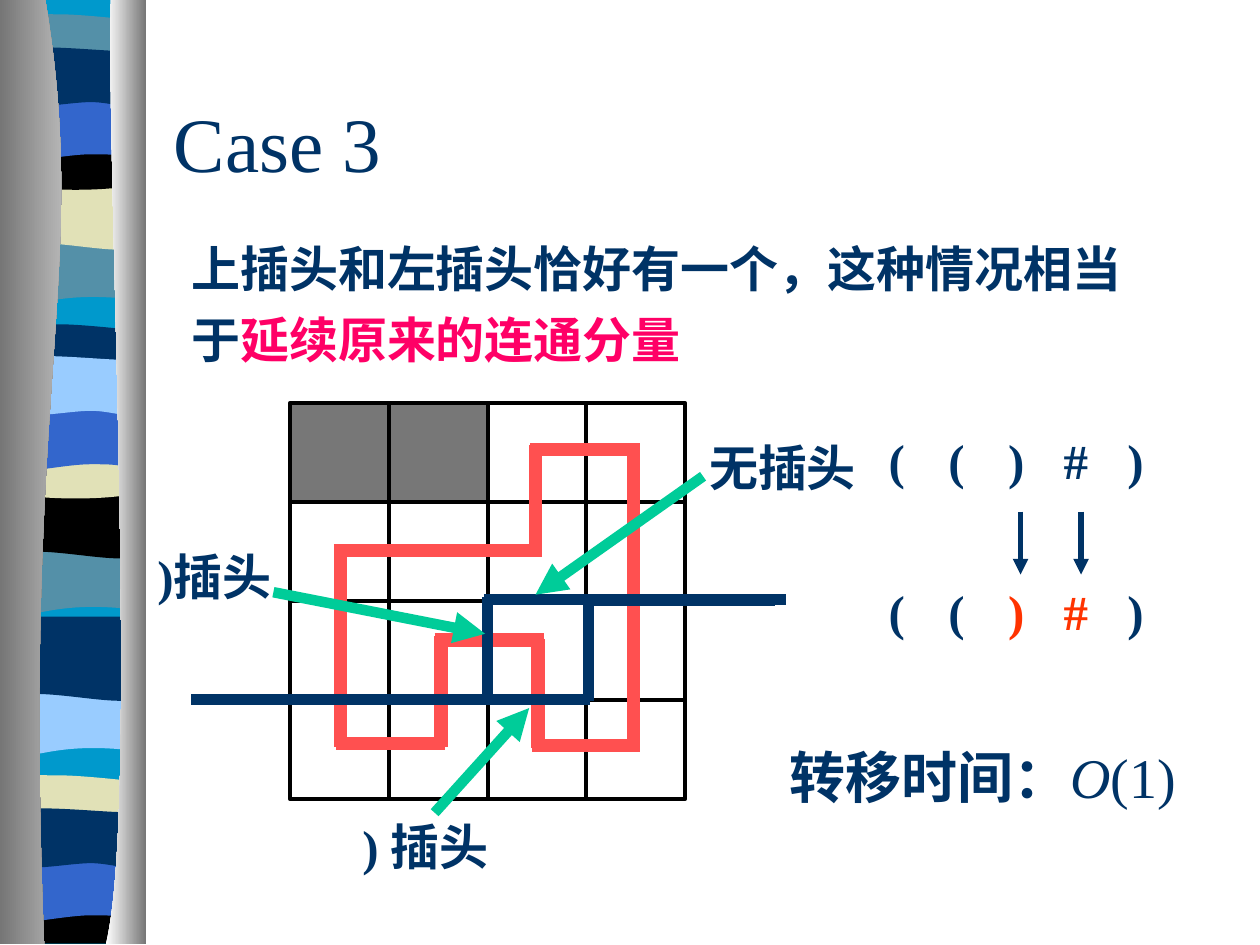
import pptx
import pptx.dml.color
import pptx.enum.shapes
import pptx.enum.text
import pptx.oxml
import pptx.oxml.ns
import pptx.util
from pptx.util import Inches

COLORS = {
    "navy": "003366", "pink": "FF0066", "red": "FF3300", "loop": "FF5050",
    "green": "00CC99", "black": "000000", "gray": "777777", "steel": "767676",
    "silver": "D3D3D3", "white": "FFFFFF", "cyan": "0099CC", "teal": "5490A8",
    "sand": "E1E1B7", "blue": "3366CC", "sky": "99CCFF",
}
LATIN, CHINESE = "Times New Roman", "Noto Sans CJK SC"
ALIGN = pptx.enum.text.PP_ALIGN
ANCHOR = pptx.enum.text.MSO_ANCHOR
LEFT, RIGHT = 0.05, 1.14
SWELL = 1.35

# Band outlines: start, then lines (1 point) and cubic curves (3 points), y from the band's top.
CREST = [[(0.72, 0.05), (0.91, 0), (RIGHT, 0)]]
PROFILES = {
    "slant": [[(RIGHT, 0)], [(RIGHT, 0.47)], [(0.39, 0.39), (0.24, 0.55), (LEFT, 0.47)],
              [(LEFT, 0)]],
    "wave": [[(RIGHT, 0)], [(RIGHT, 0.47)], [(0.96, 0.55), (0.39, 0.41), (LEFT, 0.47)],
             [(LEFT, 0)]],
    "lens": [[(RIGHT, 0)], [(RIGHT, 0.24)], [(0.96, 0.29), (0.24, 0.29), (LEFT, 0.24)],
             [(LEFT, 0)], [(0.12, -0.05), (0.29, -0.04), (0.47, -0.04)],
             [(0.65, -0.04), (1, -0.01), (RIGHT, 0)]],
    "bowl": [[(RIGHT, 0)], [(RIGHT, 0.32)], [(0.96, 0.38), (0.24, 0.38), (LEFT, 0.32)],
             [(LEFT, 0)]] + CREST,
    "foot": [[(RIGHT, 0)], [(RIGHT, 0.37)], [(LEFT, 0.37)], [(LEFT, 0)]] + CREST,
    "arch": [[(RIGHT, 0)], [(RIGHT, 0.47)], [(0.97, 0.42), (0.9, 0.42), (0.72, 0.42)],
             [(0.54, 0.42), (0.22, 0.47), (LEFT, 0.47)], [(LEFT, 0)]],
    "drape": [[(RIGHT, 0)], [(RIGHT, 0.3)], [(1.07, 0.36), (0.9, 0.3), (0.72, 0.3)],
              [(0.54, 0.3), (0.17, 0.36), (LEFT, 0.3)], [(LEFT, 0)],
              [(0.21, -0.05), (0.79, 0), (0.97, 0)]],
}
BANDS = [
    ("slant", 1.85, "teal"), ("wave", 1.41, "sand"), ("lens", 0.21, "teal"),
    ("bowl", 1.08, "black"), ("arch", 0.74, "blue"), ("drape", 0.46, "navy"),
    ("slant", 4.31, "teal"), ("wave", 3.86, "black"), ("lens", 2.67, "navy"),
    ("bowl", 3.53, "sand"), ("arch", 3.2, "blue"), ("drape", 2.91, "sky"),
    ("slant", 5.43, "sky"), ("wave", 4.99, "navy"), ("lens", 6.25, "sand"),
    ("foot", 7.12, "black"), ("arch", 6.78, "blue"), ("drape", 6.5, "navy"),
]


def rgb(name):
    return pptx.dml.color.RGBColor.from_string(COLORS[name])


def drawing_element(markup):
    """Make a DrawingML element from its tag and attributes."""
    return pptx.oxml.parse_xml(f'<a:{markup} {pptx.oxml.ns.nsdecls("a")}/>')


def add_outline(page, outline, top, colors, swell=1):
    """Draw a filled outline; two colours make a left-to-right gradient."""
    heights = [y for segment in outline for _, y in segment]
    middle = (min(heights) + max(heights)) / 2
    points = [(Inches(x), Inches(top + middle + (y - middle) * swell))
              for segment in outline for x, y in segment]
    builder = page.shapes.build_freeform(*points[0], scale=1.0)
    builder.add_line_segments(points[1:], close=True)
    shape = builder.convert_to_shape()
    lines = iter(list(shape._element.iter(pptx.oxml.ns.qn("a:lnTo"))))
    for segment in outline[1:]:
        steps = [next(lines) for _ in segment]
        if len(steps) == 3:
            curve = drawing_element("cubicBezTo")
            steps[0].addprevious(curve)
            for step in steps:
                curve.append(step[0])
                step.getparent().remove(step)
    shape.shadow.inherit = False
    shape.line.fill.background()
    if len(colors) == 1:
        shape.fill.solid()
        shape.fill.fore_color.rgb = rgb(colors[0])
    else:
        shape.fill.gradient()
        shape.fill.gradient_angle = 0
        for stop, color in zip(shape.fill.gradient_stops, colors):
            stop.color.rgb = rgb(color)


def add_ribbon(page, master, top, height):
    """Striped ribbon between two shaded curtains, kept on the slide master."""
    group = page.shapes.add_group_shape()
    backdrop = [[(RIGHT, 0)], [(RIGHT, height)], [(LEFT, height)], [(LEFT, 0)]]
    add_outline(group, backdrop, top, ["cyan"])
    for profile, offset, color in BANDS:
        swell = 1 if profile == "foot" else SWELL
        add_outline(group, PROFILES[profile], top + offset, [color], swell)
    left_curtain = [[(0.36, 0)], [(0.72, 2.17), (0.17, 2.97), (0.35, height)],
                    [(0, height)], [(0, 0)]]
    right_curtain = [[(0.88, 0)], [(0.84, 1.25), (1.11, 6.46), (0.84, height)],
                     [(1.16, height)], [(1.16, 0)]]
    add_outline(group, left_curtain, top, ["steel", "silver"])
    add_outline(group, right_curtain, top, ["white", "steel"])
    master.shapes._spTree.append(group._element)


def add_span(para, text, size=28, color="navy", font=LATIN, bold=True, italic=False):
    span = para.add_run()
    span.text = text
    span.font.size = pptx.util.Pt(size)
    span.font.name = font
    span.font.bold = bold
    span.font.italic = italic
    span.font.color.rgb = rgb(color)
    latin = span.font._element.find(pptx.oxml.ns.qn("a:latin"))
    latin.addnext(drawing_element(f'ea typeface="{CHINESE}"'))


def add_text(page, box, spans, align=ALIGN.LEFT, anchor=ANCHOR.TOP, wrap=True, spacing=None):
    """Add a one-paragraph text box; spans are (text, format) pairs."""
    frame = page.shapes.add_textbox(*map(Inches, box)).text_frame
    frame.word_wrap = wrap
    frame.vertical_anchor = anchor
    para = frame.paragraphs[0]
    para.alignment = align
    para.line_spacing = spacing
    for text, style in spans:
        add_span(para, text, **style)


def add_line(page, start, end, color, width, arrow=False):
    line = page.shapes.add_connector(
        pptx.enum.shapes.MSO_CONNECTOR.STRAIGHT, *map(Inches, (*start, *end)))
    line.line.color.rgb = rgb(color)
    line.line.width = pptx.util.Pt(width)
    if arrow:
        line.line._get_or_add_ln().append(drawing_element('tailEnd type="triangle"'))
    line._element.spPr.append(drawing_element("effectLst"))


def add_title(page, box, text):
    title = page.shapes.title
    title.left, title.top, title.width, title.height = map(Inches, box)
    title.text_frame.vertical_anchor = ANCHOR.MIDDLE
    para = title.text_frame.paragraphs[0]
    para.alignment = ALIGN.LEFT
    add_span(para, text, size=44, bold=False)


def add_board(page, left, top, cell):
    """Grid with two blocked cells, the loop, the frontier and its labels."""
    def at(x, y):
        return left + x, top + y

    grid = page.shapes.add_group_shape()
    for row in range(4):
        for column in range(4):
            square = grid.shapes.add_shape(
                pptx.enum.shapes.MSO_SHAPE.RECTANGLE,
                *map(Inches, (*at(column * cell, row * cell), cell, cell)))
            square.shadow.inherit = False
            square.line.color.rgb = rgb("black")
            square.line.width = pptx.util.Pt(2.25)
            if row == 0 and column < 2:
                square.fill.solid()
                square.fill.fore_color.rgb = rgb("gray")
            else:
                square.fill.background()

    loop = [(0.4, 1.15, 0.4, 2.73), (0.35, 1.17, 2, 1.17), (1.95, 0.33, 1.95, 1.2),
            (1.91, 0.37, 2.78, 0.37), (2.73, 0.33, 2.73, 2.77), (1.92, 2.72, 2.78, 2.72),
            (1.97, 1.87, 1.97, 2.74), (1.15, 1.88, 2.02, 1.88), (1.2, 1.85, 1.2, 2.73),
            (0.37, 2.7, 1.23, 2.7)]
    pointers = [(3.28, 0.58, 1.95, 1.52), (-0.13, 1.5, 1.55, 1.83), (1.15, 3.25, 1.9, 2.42)]
    frontier = [(-0.77, 2.35, 2.38, 2.35), (2.36, 1.57, 3.85, 1.57), (2.37, 1.54, 2.37, 2.36),
                (-0.78, 2.35, 1.61, 2.35), (1.54, 1.56, 3.94, 1.56), (1.57, 1.54, 1.57, 2.36)]
    for parent, lines, color, width, arrow in (
            (grid, loop, "loop", 7.5, False), (page, pointers, "green", 6, True),
            (page.shapes.add_group_shape(), frontier, "navy", 6, False)):
        for x1, y1, x2, y2 in lines:
            add_line(parent, at(x1, y1), at(x2, y2), color, width, arrow)
    for x, y, width, text in ((0.38, 3.23, 1.58, " ) 插头"), (-1.15, 1.09, 1.42, ")插头"),
                              (3.23, 0.22, 1.42, "无插头")):
        add_text(page, (*at(x, y), width, 0.57), [(text, {})])


def add_states(page, left, top, width):
    """Bracket states before and after the step, with the changed pair in red."""
    symbols = "(()#)"
    pitch = width / len(symbols)
    for y, changed in ((top, ()), (top + 1.2, (2, 3))):
        row = page.shapes.add_group_shape()
        for index, symbol in enumerate(symbols):
            color = "red" if index in changed else "navy"
            add_text(row, (left + index * pitch, y, pitch, pitch), [(symbol, {"color": color})],
                     align=ALIGN.CENTER, anchor=ANCHOR.MIDDLE, wrap=False)
    for x in (left + 1.22, left + 1.7):
        add_line(page, (x, top + 0.65), (x, top + 1.15), "navy", 3, arrow=True)


def main():
    deck = pptx.Presentation()
    deck.slide_width, deck.slide_height = Inches(10), Inches(7.5)
    page = deck.slides.add_slide(deck.slide_layouts[5])
    add_ribbon(page, deck.slide_master, 0, 7.49)
    add_title(page, (1.28, 0.5, 8.5, 1.25), "Case 3")
    add_text(page, (1.42, 1.75, 7.92, 1.22), [
        ("上", {}), ("插头和左插头恰好有一个，这种情况相当于", {"font": CHINESE}),
        ("延续原来的连通分量", {"font": CHINESE, "color": "pink"})], spacing=1.2)
    add_board(page, 2.3, 3.2, 0.785)
    add_states(page, 6.88, 3.41, 2.37)
    add_text(page, (6.17, 5.84, 3.75, 0.63), [
        ("转移时间：", {"size": 32, "font": CHINESE}),
        ("O", {"size": 32, "bold": False, "italic": True}),
        ("(1)", {"size": 32, "bold": False})])
    deck.save("out.pptx")


if __name__ == "__main__":
    main()
